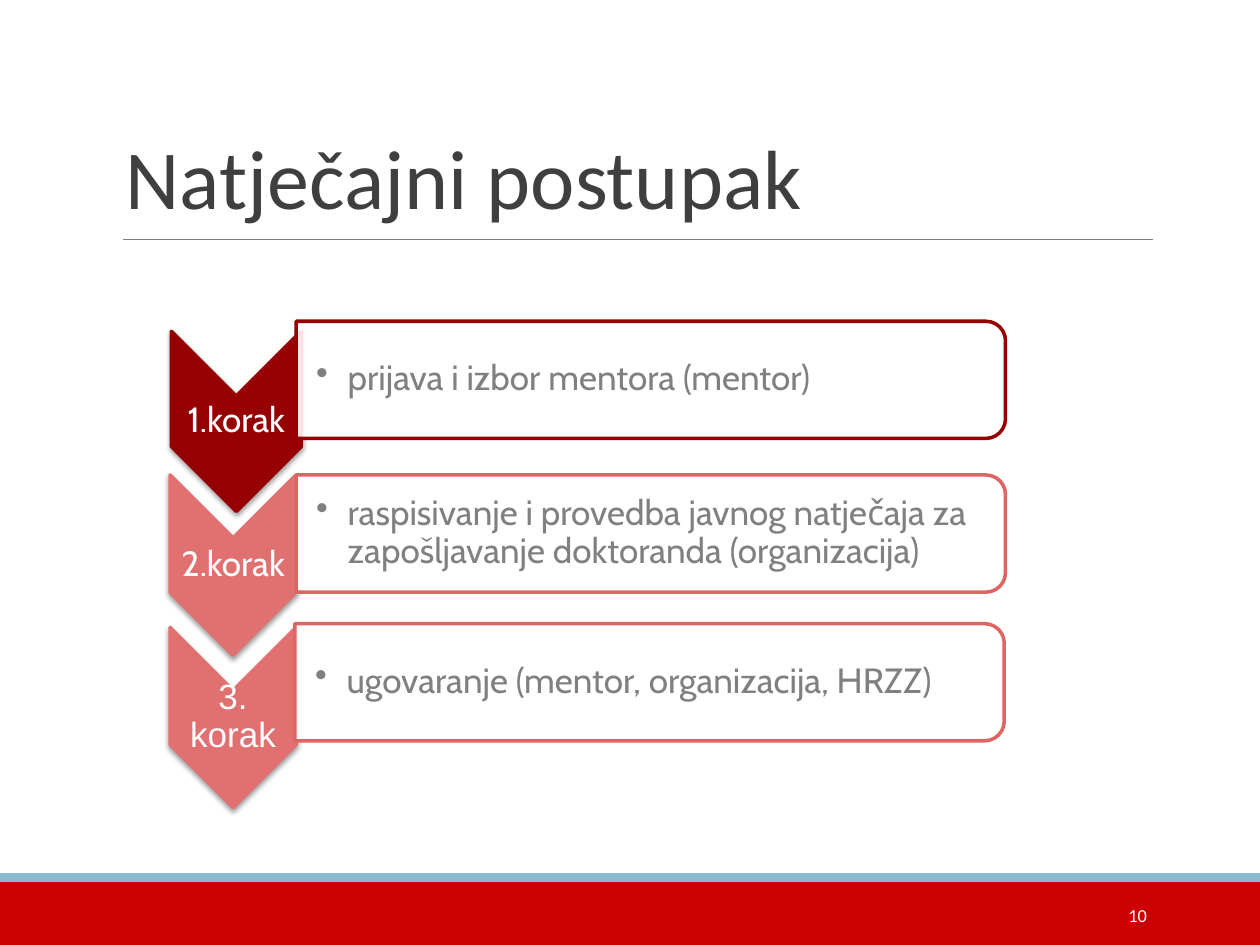
from pptx import Presentation
from pptx.dml.color import RGBColor
from pptx.enum.shapes import MSO_CONNECTOR as Line, MSO_SHAPE as Shape
from pptx.enum.text import MSO_ANCHOR as Anchor, PP_ALIGN as Align
from pptx.oxml import parse_xml
from pptx.oxml.ns import nsdecls
from pptx.oxml.xmlchemy import OxmlElement as Element
from pptx.util import Inches, Pt

WHITE = RGBColor(0xFF, 0xFF, 0xFF)
RED = RGBColor(0xCC, 0x00, 0x00)
BLUE = RGBColor(0x8A, 0xB8, 0xCC)
RULE = RGBColor(0x7F, 0x7F, 0x7F)
DARK = RGBColor(0x3F, 0x3F, 0x3F)
GREY = RGBColor(0x80, 0x80, 0x80)
MAROON = RGBColor(0x97, 0x00, 0x00)
PINK = RGBColor(0xE1, 0x71, 0x71)
ROSE = RGBColor(0xDF, 0x64, 0x64)

STEPS = [
    ("1.korak", "prijava i izbor mentora (mentor)", "Cabin", MAROON, MAROON,
     (1.36, 2.63, 1.03), (2.35, 2.55)),
    ("2.korak", "raspisivanje i provedba javnog natječaja za "
     "zapošljavanje doktoranda (organizacija)", "Cabin", PINK, ROSE,
     (1.35, 3.77, 1), (2.35, 3.77)),
    ("3. korak", "ugovaranje (mentor, organizacija, HRZZ)", "Arial", PINK, ROSE,
     (1.35, 4.98, 1), (2.34, 4.95)),
]


def add_text(slide, text, x, y, w, h, size=20, font="Cabin", color=WHITE,
             align=Align.LEFT, anchor=Anchor.MIDDLE, space=0.9,
             pad=(0.01, 0.01, 0.01, 0.01), bullet=False):
    box = slide.shapes.add_textbox(Inches(x), Inches(y), Inches(w), Inches(h))
    frame = box.text_frame
    frame.word_wrap = True
    frame.vertical_anchor = anchor
    (frame.margin_left, frame.margin_top,
     frame.margin_right, frame.margin_bottom) = map(Inches, pad)
    para = frame.paragraphs[0]
    para.alignment = align
    para.line_spacing = space
    run = para.add_run()
    run.text = text
    run.font.size = Pt(size)
    run.font.name = font
    run.font.color.rgb = color
    if bullet:
        props = para._p.get_or_add_pPr()
        props.set("marL", str(Inches(0.25)))
        props.set("indent", str(Inches(-0.25)))
        mark = Element("a:buChar")
        mark.set("char", "•")
        props.append(mark)


def add_block(slide, kind, x, y, w, h, fill, line=None, turn=False):
    if turn:
        x, y, w, h = x + (w - h) / 2, y + (h - w) / 2, h, w
    block = slide.shapes.add_shape(kind, Inches(x), Inches(y), Inches(w), Inches(h))
    block.rotation = 90 if turn else 0
    block.shadow.inherit = False
    block.fill.solid()
    block.fill.fore_color.rgb = fill
    if line is None:
        block.line.fill.background()
    else:
        block.line.color.rgb = line
        block.line.width = Pt(2)
    return block


def add_shadow(block):
    props = block._element.spPr
    props.remove(props.find("{*}effectLst"))
    props.append(parse_xml(
        f'<a:effectLst {nsdecls("a")}><a:outerShdw blurRad="{Pt(3.1)}" '
        f'dist="{Pt(1.6)}" dir="5400000" rotWithShape="0">'
        '<a:srgbClr val="000000"><a:alpha val="38000"/></a:srgbClr>'
        '</a:outerShdw></a:effectLst>'))


def add_arrow(slide, text, font, fill, x, y, w):
    add_shadow(add_block(slide, Shape.CHEVRON, x, y, w, 1.43, fill, fill, turn=True))
    add_text(slide, text, x, y + 0.5, w, 0.43, font=font, align=Align.CENTER)


def add_panel(slide, text, line, x, y):
    panel = add_block(slide, Shape.ROUND_2_SAME_RECTANGLE, x, y, 5.63, 0.93,
                      WHITE, line, turn=True)
    alpha = Element("a:alpha")
    alpha.set("val", "90000")
    panel._element.spPr.find("{*}solidFill")[0].append(alpha)
    add_text(slide, text, x, y + 0.04, 5.58, 0.84, color=GREY,
             pad=(0.16, 0.01, 0.01, 0.01), bullet=True)


def add_head(slide, x, y, w, h):
    base = Inches(y + h)
    rule = slide.shapes.add_connector(
        Line.STRAIGHT, Inches(x + 0.08), base, Inches(x + w), base)
    rule.line.color.rgb = RULE
    rule.line.width = Pt(0.75)
    rule._element.spPr.append(Element("a:effectLst"))
    add_text(slide, "Natječajni postupak", x, y, w, h, size=48, font="Calibri",
             color=DARK, anchor=Anchor.BOTTOM, space=0.85, pad=(0.1,) * 4)


def add_foot(slide, x, y, w, h):
    add_block(slide, Shape.RECTANGLE, x, y, w, h, RED)
    add_block(slide, Shape.RECTANGLE, x, y - 0.07, w, 0.07, BLUE)
    add_text(slide, "10", x + w - 1.88, y + 0.06, 1.08, 0.4, size=10.5,
             font="Calibri", align=Align.RIGHT, space=1,
             pad=(0.1, 0.05, 0.1, 0.05))


def main():
    deck = Presentation()
    deck.slide_width, deck.slide_height = Inches(10), Inches(7.5)
    slide = deck.slides.add_slide(deck.slide_layouts[6])
    add_foot(slide, 0, 7, 10, 0.5)
    add_head(slide, 0.9, 0.31, 8.25, 1.59)
    for label, text, font, fill, line, arrow, panel in STEPS:
        add_arrow(slide, label, font, fill, *arrow)
        add_panel(slide, text, line, *panel)
    deck.save("out.pptx")


if __name__ == "__main__":
    main()
